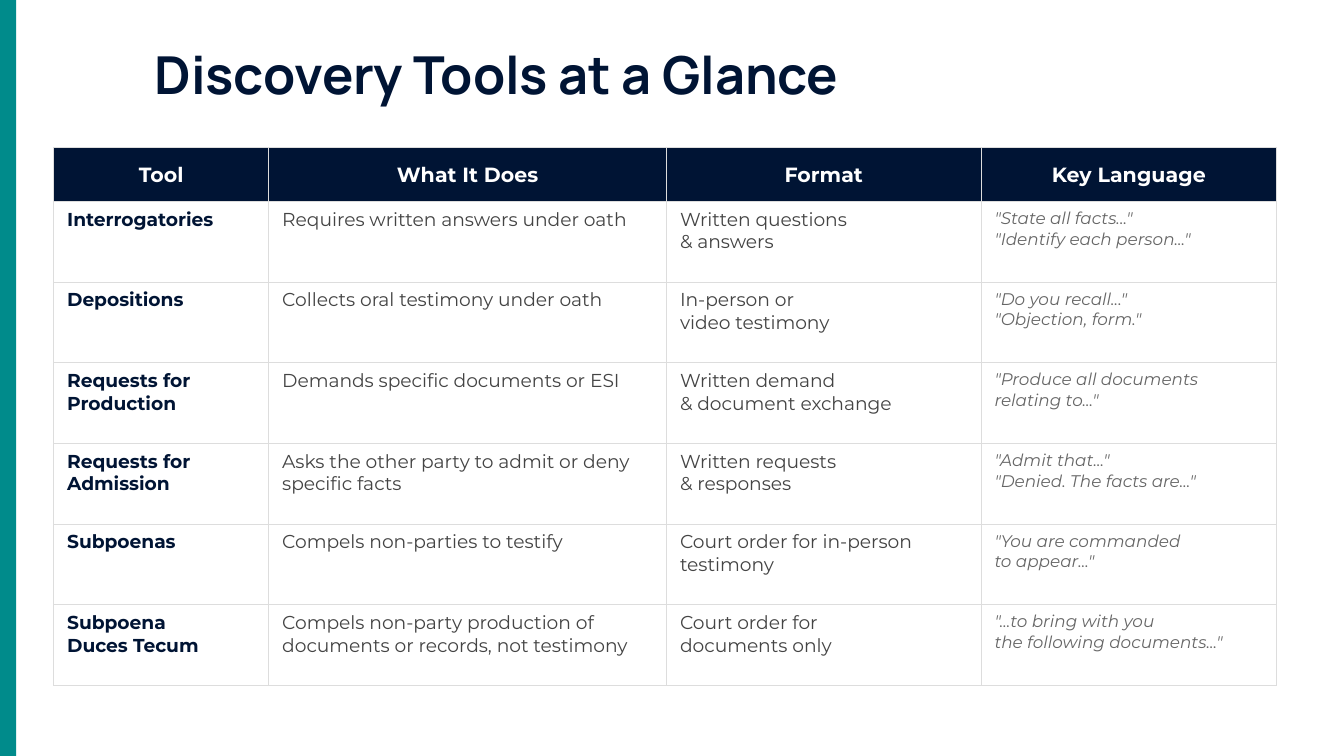
from lxml.etree import SubElement
from pptx import Presentation
from pptx.dml.color import RGBColor
from pptx.enum.shapes import MSO_SHAPE as Shape
from pptx.enum.text import MSO_ANCHOR as Anchor, PP_ALIGN as Align
from pptx.oxml.ns import qn
from pptx.util import Inches, Pt

NAVY = RGBColor(0x00, 0x14, 0x34)
TEAL = RGBColor(0x00, 0x8B, 0x8B)
WHITE = RGBColor(0xFF, 0xFF, 0xFF)
DARK_GRAY = RGBColor(0x44, 0x44, 0x44)
MID_GRAY = RGBColor(0x66, 0x66, 0x66)
BORDER = RGBColor(0xDD, 0xDD, 0xDD)

TITLE = "Discovery Tools at a Glance"
HEADERS = ["Tool", "What It Does", "Format", "Key Language"]
TOOLS = [
    ("Interrogatories", "Requires written answers under oath",
     "Written questions\n& answers",
     '"State all facts..."\n"Identify each person..."'),
    ("Depositions", "Collects oral testimony under oath",
     "In-person or\nvideo testimony",
     '"Do you recall..."\n"Objection, form."'),
    ("Requests for\nProduction", "Demands specific documents or ESI",
     "Written demand\n& document exchange",
     '"Produce all documents\nrelating to..."'),
    ("Requests for\nAdmission", "Asks the other party to admit or deny specific facts",
     "Written requests\n& responses",
     '"Admit that..."\n"Denied. The facts are..."'),
    ("Subpoenas", "Compels non-parties to testify",
     "Court order for in-person testimony",
     '"You are commanded\nto appear..."'),
    ("Subpoena\nDuces Tecum",
     "Compels non-party production of documents or records, not testimony",
     "Court order for\ndocuments only",
     '"...to bring with you\nthe following documents..."'),
]

SLIDE_W = 10
SLIDE_H = SLIDE_W * 9 / 16
COL_WIDTHS = [1.6, 2.96, 2.34, 2.2]
HEADER_H, ROW_H = 0.4, 0.6

HEADER_STYLE = dict(size=11, color=WHITE, bold=True, align=Align.CENTER)
PLAIN_STYLE = dict(size=10, color=DARK_GRAY)
COLUMN_STYLES = [
    dict(size=10, color=NAVY, bold=True),
    PLAIN_STYLE,
    PLAIN_STYLE,
    dict(size=9, color=MID_GRAY, italic=True),
]


def write(tf, text, size, color, bold=False, italic=False,
          align=Align.LEFT, font="Montserrat"):
    for i, line in enumerate(text.split("\n")):
        p = tf.add_paragraph() if i else tf.paragraphs[0]
        p.alignment = align
        r = p.add_run()
        r.text = line
        r.font.name = font
        r.font.size = Pt(size)
        r.font.bold = bold
        r.font.italic = italic
        r.font.color.rgb = color


def add_borders(cell):
    tcPr = cell._tc.get_or_add_tcPr()
    for i, side in enumerate(("lnL", "lnR", "lnT", "lnB")):
        ln = tcPr.makeelement(qn(f"a:{side}"), {"w": str(Pt(0.5))})
        fill = SubElement(ln, qn("a:solidFill"))
        SubElement(fill, qn("a:srgbClr"), val=str(BORDER))
        tcPr.insert(i, ln)


def fill_cell(cell, text, style, fill=None, anchor=Anchor.TOP):
    cell.vertical_anchor = anchor
    if fill is None:
        cell.fill.background()
    else:
        cell.fill.solid()
        cell.fill.fore_color.rgb = fill
    add_borders(cell)
    write(cell.text_frame, text, **style)


def add_side_bar(s):
    sp = s.shapes.add_shape(Shape.RECTANGLE, 0, 0, Inches(0.12), Inches(SLIDE_H))
    sp.shadow.inherit = False
    sp.fill.solid()
    sp.fill.fore_color.rgb = TEAL
    sp.line.fill.background()


def add_title(s):
    sp = s.shapes.add_textbox(Inches(1.15), Inches(0.3), Inches(7), Inches(0.5))
    tf = sp.text_frame
    tf.word_wrap = True
    tf.vertical_anchor = Anchor.MIDDLE
    tf.margin_left = tf.margin_right = tf.margin_top = tf.margin_bottom = 0
    write(tf, TITLE, 28, NAVY, bold=True, font="Manrope")


def add_tools_table(s):
    height = HEADER_H + ROW_H * len(TOOLS)
    table = s.shapes.add_table(
        len(TOOLS) + 1, len(HEADERS), Inches(0.4), Inches(1.1),
        Inches(sum(COL_WIDTHS)), Inches(height)).table
    for column, width in zip(table.columns, COL_WIDTHS):
        column.width = Inches(width)
    for i, row in enumerate(table.rows):
        row.height = Inches(ROW_H if i else HEADER_H)
    for c, header in enumerate(HEADERS):
        fill_cell(table.cell(0, c), header, HEADER_STYLE, NAVY, Anchor.MIDDLE)
    for r, tool in enumerate(TOOLS, start=1):
        for c, (text, style) in enumerate(zip(tool, COLUMN_STYLES)):
            fill_cell(table.cell(r, c), text, style)


def main():
    prs = Presentation()
    prs.slide_width, prs.slide_height = Inches(SLIDE_W), Inches(SLIDE_H)
    s = prs.slides.add_slide(prs.slide_layouts[6])
    s.background.fill.solid()
    s.background.fill.fore_color.rgb = WHITE
    add_side_bar(s)
    add_title(s)
    add_tools_table(s)
    prs.save("out.pptx")


if __name__ == "__main__":
    main()
